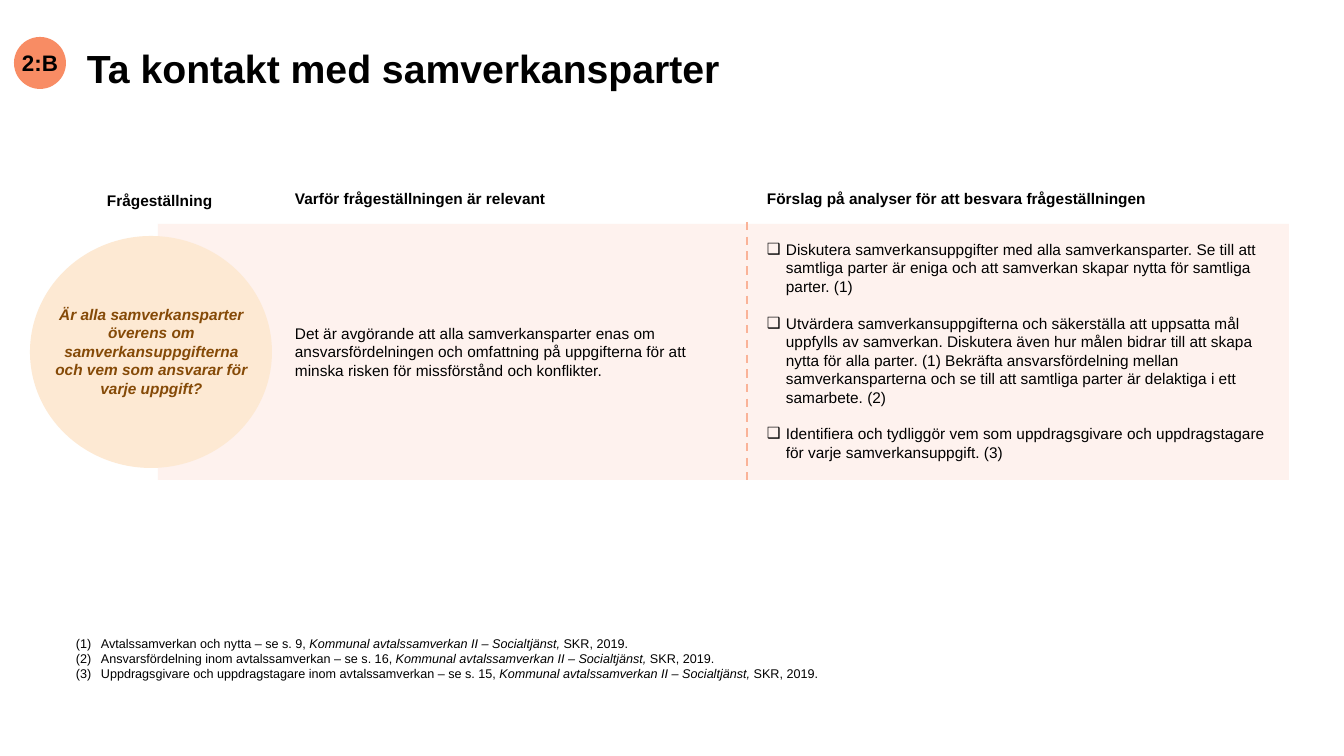
import dataclasses

import lxml.etree
import pptx
import pptx.dml.color
import pptx.enum.dml
import pptx.enum.shapes
import pptx.enum.text
import pptx.oxml.ns
import pptx.util

SHAPES = pptx.enum.shapes.MSO_SHAPE
ALIGN = pptx.enum.text.PP_ALIGN
QN = pptx.oxml.ns.qn


@dataclasses.dataclass(frozen=True)
class Theme:
    font: str = "Arial"
    ink: str = "000000"
    badge: str = "F88C64"
    band: str = "FDD9CB"
    circle: str = "FDE9D3"
    question: str = "854A07"
    divider: str = "FAB398"
    title_size: int = 28
    badge_size: int = 16
    body_size: int = 11
    note_size: int = 9


def add_run(paragraph, text, *, theme, size, color, bold=False, italic=False):
    run = paragraph.add_run()
    run.text = text
    run.font.name = theme.font
    run.font.size = pptx.util.Pt(size)
    run.font.bold = bold
    run.font.italic = italic
    run.font.color.rgb = pptx.dml.color.RGBColor.from_string(color)


class SlideBuilder:
    """Draw themed elements on one slide, with lengths in px."""

    def __init__(self, slide, theme):
        self.slide = slide
        self.theme = theme

    @staticmethod
    def px(length):
        return pptx.util.Emu(round(length * 914400 / 100.8))

    def shape(self, kind, box, color, alpha=None):
        shape = self.slide.shapes.add_shape(kind, *map(self.px, box))
        shape.shadow.inherit = False
        shape.fill.solid()
        shape.fill.fore_color.rgb = pptx.dml.color.RGBColor.from_string(color)
        shape.line.fill.background()
        if alpha is not None:
            fill = shape._element.spPr.find(QN("a:solidFill"))
            lxml.etree.SubElement(fill[0], QN("a:alpha"), val=str(alpha * 1000))
        return shape

    def dashed_line(self, x, top, bottom):
        line = self.slide.shapes.add_connector(
            pptx.enum.shapes.MSO_CONNECTOR.STRAIGHT,
            *map(self.px, (x, top, x, bottom)))
        line.line.color.rgb = pptx.dml.color.RGBColor.from_string(self.theme.divider)
        line.line.width = pptx.util.Pt(1.5)
        line.line.dash_style = pptx.enum.dml.MSO_LINE.DASH
        lxml.etree.SubElement(line._element.spPr, QN("a:effectLst"))

    def bullet(self, paragraph, indent, tag, **attributes):
        properties = paragraph._p.get_or_add_pPr()
        properties.set("marL", str(self.px(indent)))
        properties.set("indent", str(-self.px(indent)))
        lxml.etree.SubElement(properties, QN("a:buFont"), typeface=self.theme.font)
        lxml.etree.SubElement(properties, QN(tag), **attributes)

    def fill_frame(self, frame, paragraphs, *, size=None, color=None, bold=False,
                   italic=False, align=ALIGN.LEFT, gap=0, bullet=None):
        for index, runs in enumerate(paragraphs):
            paragraph = frame.add_paragraph() if index else frame.paragraphs[0]
            paragraph.alignment = align
            if index and gap:
                paragraph.space_before = pptx.util.Pt(gap)
            if bullet:
                self.bullet(paragraph, **bullet)
            for text, slanted in runs:
                add_run(paragraph, text, theme=self.theme,
                        size=size or self.theme.body_size,
                        color=color or self.theme.ink,
                        bold=bold, italic=italic or slanted)

    def text(self, box, *paragraphs, **style):
        frame = self.slide.shapes.add_textbox(*map(self.px, box)).text_frame
        frame.word_wrap = True
        self.fill_frame(frame, [[(item, False)] if isinstance(item, str) else item
                                for item in paragraphs], **style)

    def badge(self, box, label):
        frame = self.shape(SHAPES.OVAL, box, self.theme.badge).text_frame
        frame.margin_left = frame.margin_right = 0
        frame.margin_top = frame.margin_bottom = 0
        frame.word_wrap = False
        frame.vertical_anchor = pptx.enum.text.MSO_ANCHOR.MIDDLE
        self.fill_frame(frame, [[(label, False)]], size=self.theme.badge_size,
                        bold=True, align=ALIGN.CENTER)


HEADINGS = [
    ((97, 186, 155, 29), "Frågeställning"),
    ((285, 184, 274, 29), "Varför frågeställningen är relevant"),
    ((757, 184, 437, 29), "Förslag på analyser för att besvara frågeställningen"),
]
QUESTION = ("Är alla samverkansparter överens om samverkansuppgifterna "
            "och vem som ansvarar för varje uppgift?")
RELEVANCE = ("Det är avgörande att alla samverkansparter enas om ansvarsfördelningen "
             "och omfattning på uppgifterna för att minska risken för missförstånd "
             "och konflikter.")
ANALYSES = [
    "Diskutera samverkansuppgifter med alla samverkansparter. Se till att samtliga "
    "parter är eniga och att samverkan skapar nytta för samtliga parter. (1)",
    "Utvärdera samverkansuppgifterna och säkerställa att uppsatta mål uppfylls av "
    "samverkan. Diskutera även hur målen bidrar till att skapa nytta för alla parter. "
    "(1) Bekräfta ansvarsfördelning mellan samverkansparterna och se till att "
    "samtliga parter är delaktiga i ett samarbete. (2)",
    "Identifiera och tydliggör vem som uppdragsgivare och uppdragstagare för varje "
    "samverkansuppgift. (3)",
]
SOURCES = [
    ("Avtalssamverkan och nytta", 9),
    ("Ansvarsfördelning inom avtalssamverkan", 16),
    ("Uppdragsgivare och uppdragstagare inom avtalssamverkan", 15),
]


def main():
    presentation = pptx.Presentation()
    presentation.slide_width = SlideBuilder.px(1344)
    presentation.slide_height = SlideBuilder.px(756)
    theme = Theme()
    builder = SlideBuilder(
        presentation.slides.add_slide(presentation.slide_layouts[6]), theme)

    builder.shape(SHAPES.RECTANGLE, (158, 224, 1131, 256), theme.band, alpha=32)
    builder.shape(SHAPES.OVAL, (30, 236, 242, 232), theme.circle)
    builder.dashed_line(747, 222, 480)
    for box, heading in HEADINGS:
        builder.text(box, heading, bold=True)
    builder.text((77, 39, 1059, 49), "Ta kontakt med samverkansparter",
                 size=theme.title_size, bold=True)
    builder.text((43, 300, 217, 104), QUESTION, color=theme.question,
                 bold=True, italic=True, align=ALIGN.CENTER)
    builder.text((285, 319, 435, 67), RELEVANCE)
    builder.text((757, 235, 529, 234), *ANALYSES, gap=13,
                 bullet={"indent": 19, "tag": "a:buChar", "char": "❑"})
    notes = [[(f"{topic} – se s. {page}, ", False),
              ("Kommunal avtalssamverkan II – Socialtjänst, ", True),
              ("SKR, 2019.", False)] for topic, page in SOURCES]
    builder.text((66, 631, 1074, 56), *notes, size=theme.note_size,
                 bullet={"indent": 25, "tag": "a:buAutoNum", "type": "arabicParenBoth"})
    builder.badge((14, 37, 52, 52), "2:B")
    presentation.save("out.pptx")


if __name__ == "__main__":
    main()
